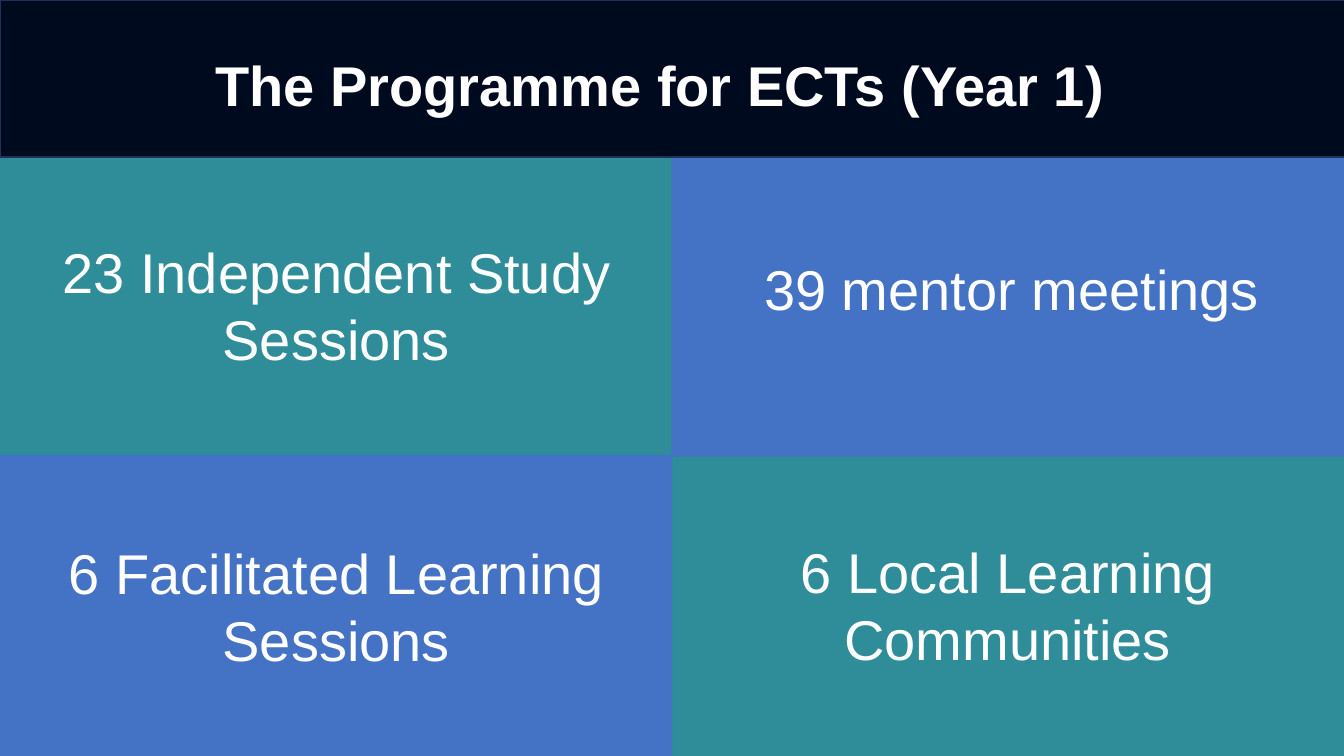
import dataclasses
import typing

import pptx
import pptx.dml.color
import pptx.enum.shapes
import pptx.enum.text
import pptx.util

Inches = pptx.util.Inches
Align = pptx.enum.text.PP_ALIGN
Anchor = pptx.enum.text.MSO_ANCHOR

WHITE = "FFFFFF"
CREAM = "FFF2CC"
NAVY = "000A1F"
EDGE = "1E3256"
TEAL = "2F8C99"
BLUE = "4472C4"


@dataclasses.dataclass
class Panel:
    left: float
    top: float
    width: float
    height: float
    fill: str
    text: str = ""
    line: typing.Optional[str] = None


@dataclasses.dataclass
class Label:
    left: float
    top: float
    width: float
    height: float
    text: str
    bold: bool = False


def color(code: str) -> pptx.dml.color.RGBColor:
    return pptx.dml.color.RGBColor.from_string(code)


def write(frame, text: str, align: Align, bold: bool = False) -> None:
    frame.word_wrap = True
    para = frame.paragraphs[0]
    para.alignment = align
    run = para.add_run()
    run.text = text
    run.font.name = "Arial"
    run.font.size = pptx.util.Pt(40)
    run.font.bold = bold
    run.font.color.rgb = color(WHITE)


def draw(slide, item: typing.Union[Panel, Label]) -> None:
    box = [Inches(n) for n in (item.left, item.top, item.width, item.height)]
    if isinstance(item, Label):
        frame = slide.shapes.add_textbox(*box).text_frame
        write(frame, item.text, Align.LEFT, item.bold)
        frame.auto_size = pptx.enum.text.MSO_AUTO_SIZE.SHAPE_TO_FIT_TEXT
        return
    shape = slide.shapes.add_shape(
        pptx.enum.shapes.MSO_SHAPE.RECTANGLE, *box)
    shape.shadow.inherit = False
    shape.fill.solid()
    shape.fill.fore_color.rgb = color(item.fill)
    if item.line:
        shape.line.color.rgb = color(item.line)
        shape.line.width = pptx.util.Pt(1)
    else:
        shape.line.fill.background()
    if item.text:
        shape.text_frame.vertical_anchor = Anchor.MIDDLE
        write(shape.text_frame, item.text, Align.CENTER)


# Header band and four panels, from back to front
ITEMS: list[typing.Union[Panel, Label]] = [
    Panel(0, 1.52, 6.67, 3.01, TEAL, "23 Independent Study Sessions"),
    Panel(0, 0, 13.34, 1.56, NAVY, line=EDGE),
    Label(2.04, 0.45, 9.14, 0.77, "The Programme for ECTs (Year 1)", True),
    Panel(6.66, 4.49, 6.67, 3.01, TEAL, "6 Local Learning Communities"),
    Panel(6.66, 1.57, 6.67, 2.96, BLUE),
    Panel(0, 4.51, 6.67, 3, BLUE, "6 Facilitated Learning Sessions"),
    Label(7.48, 2.48, 5.85, 0.77, "39 mentor meetings"),
]


def main() -> None:
    deck = pptx.Presentation()
    deck.slide_width = Inches(13.33)
    deck.slide_height = Inches(7.5)
    slide = deck.slides.add_slide(deck.slide_layouts[6])

    # Background
    back = slide.background.fill
    back.solid()
    back.fore_color.rgb = color(CREAM)

    # Content
    for item in ITEMS:
        draw(slide, item)
    deck.save("out.pptx")


if __name__ == "__main__":
    main()
